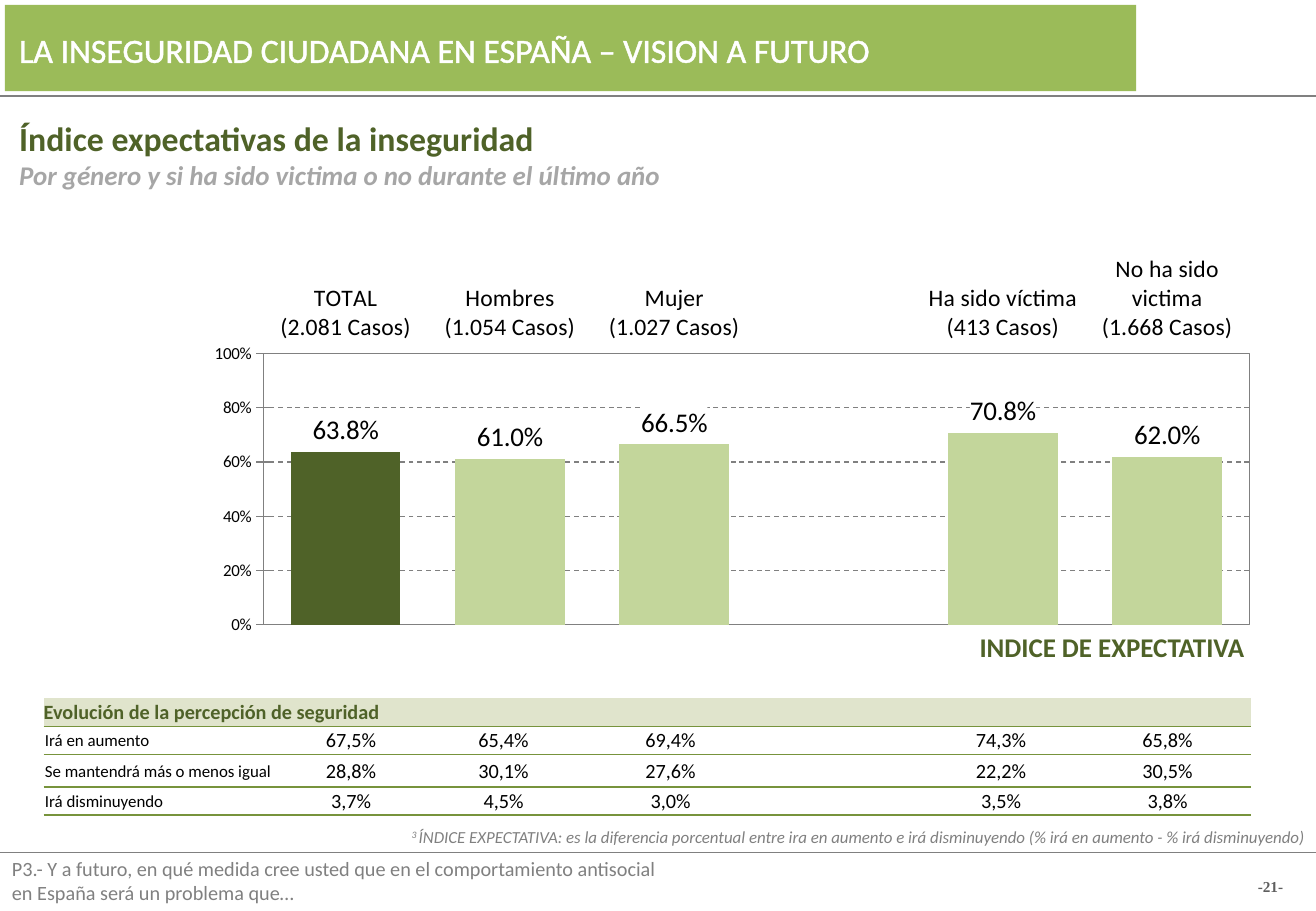
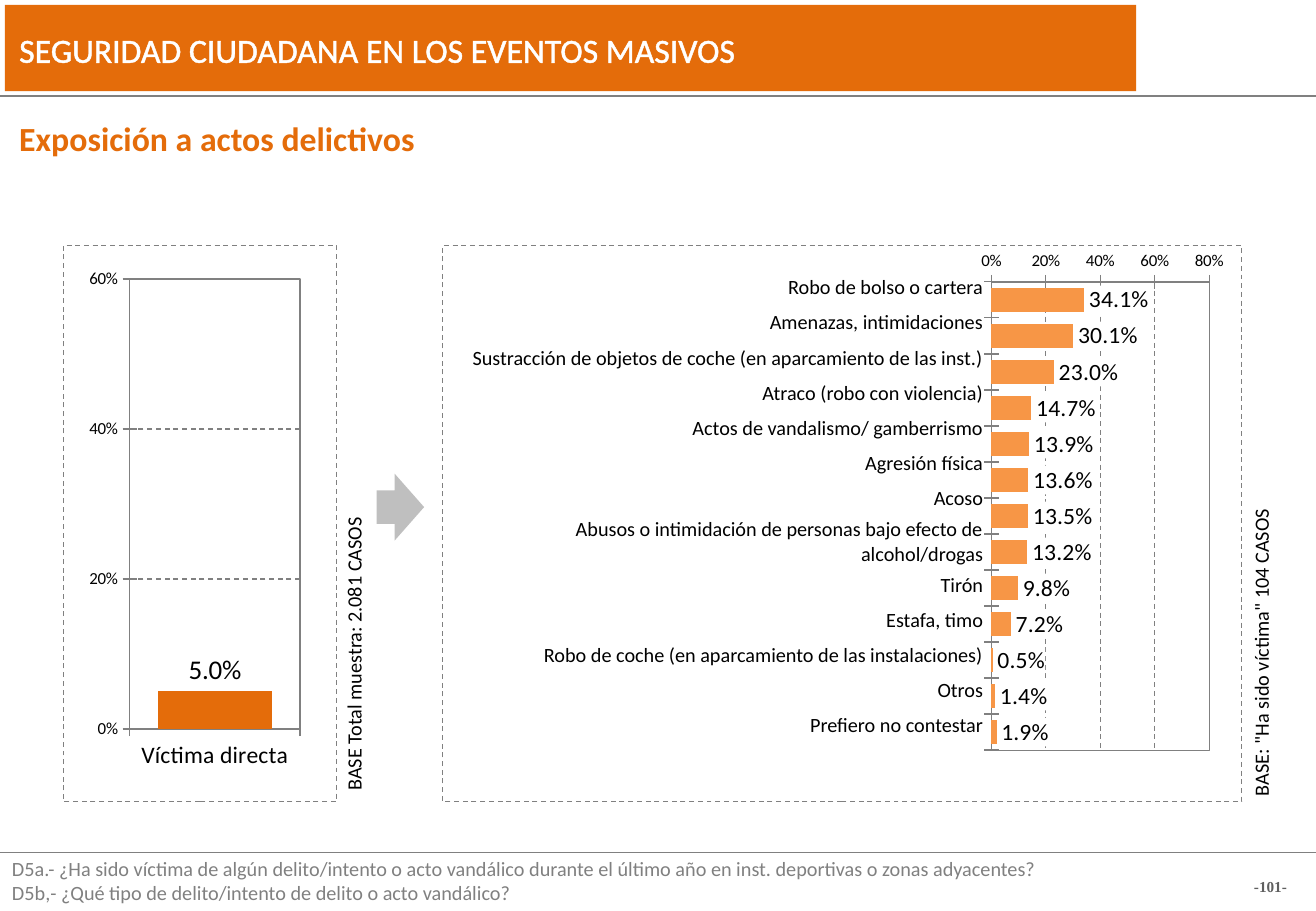
from lxml.etree import SubElement
from pptx import Presentation
from pptx.chart.data import CategoryChartData
from pptx.dml.color import RGBColor
from pptx.enum.chart import XL_AXIS_CROSSES as Crosses, XL_CHART_TYPE as ChartType
from pptx.enum.chart import XL_LABEL_POSITION as LabelPosition
from pptx.enum.chart import XL_TICK_LABEL_POSITION as TickLabels, XL_TICK_MARK as Tick
from pptx.enum.dml import MSO_LINE as Dash
from pptx.enum.shapes import MSO_CONNECTOR as Connector, MSO_SHAPE as Shape
from pptx.enum.text import MSO_ANCHOR as Anchor, PP_ALIGN as Align
from pptx.oxml import parse_xml
from pptx.oxml.ns import nsdecls, qn
from pptx.util import Pt

PX = 9144
PAGE_W, PAGE_H = 1083, 750
WHITE, BLACK = RGBColor(255, 255, 255), RGBColor(0, 0, 0)
GRAY, MID_GRAY = RGBColor(0x80, 0x80, 0x80), RGBColor(0xA6, 0xA6, 0xA6)
PAGE_GRAY, ARROW_GRAY = RGBColor(0x5F, 0x5F, 0x5F), RGBColor(0xBF, 0xBF, 0xBF)
GREEN, DARK_GREEN = RGBColor(0x9B, 0xBB, 0x59), RGBColor(0x4F, 0x62, 0x28)
PALE_GREEN, HEADER_GREEN = RGBColor(0xC3, 0xD6, 0x9B), RGBColor(0xE0, 0xE4, 0xCC)
RULE_GREEN = RGBColor(0x77, 0x93, 0x3C)
ORANGE, LIGHT_ORANGE = RGBColor(0xE4, 0x6C, 0x0A), RGBColor(0xF7, 0x96, 0x46)
NO_STYLE = "{2D5ABB26-0587-4C30-8999-92F81FD0307C}"
CELL_MARGINS = (1, 1, 1, 0)

FUTURE = {
    "band": GREEN, "accent": DARK_GREEN, "number": "-21-",
    "title": "LA INSEGURIDAD CIUDADANA EN ESPAÑA – VISION A FUTURO",
    "heading": "Índice expectativas de la inseguridad",
    "subheading": "Por género y si ha sido victima o no durante el último año",
    "question": ["P3.- Y a futuro, en qué medida cree usted que en el comportamiento antisocial",
                 "en España será un problema que…"],
}
EVENTS = {
    "band": ORANGE, "accent": ORANGE, "number": "-101-",
    "title": "SEGURIDAD CIUDADANA EN LOS EVENTOS MASIVOS",
    "heading": "Exposición a actos delictivos",
    "subheading": "",
    "question": ["D5a.- ¿Ha sido víctima de algún delito/intento o acto vandálico durante el último año "
                 "en inst. deportivas o zonas adyacentes?",
                 "D5b,- ¿Qué tipo de delito/intento de delito o acto vandálico?"],
}
EXPECTATION = [
    ("TOTAL\n(2.081 Casos)", 63.8), ("Hombres\n(1.054 Casos)", 61),
    ("Mujer\n(1.027 Casos)", 66.5), (" ", None),
    ("Ha sido víctima\n(413 Casos)", 70.8), ("No ha sido victima\n(1.668 Casos)", 62),
]
EVOLUTION_TITLE = "Evolución de la percepción de seguridad"
EVOLUTION = [
    ("Irá en aumento", "67,5%", "65,4%", "69,4%", "", "74,3%", "65,8%"),
    ("Se mantendrá más o menos igual", "28,8%", "30,1%", "27,6%", "", "22,2%", "30,5%"),
    ("Irá disminuyendo", "3,7%", "4,5%", "3,0%", "", "3,5%", "3,8%"),
]
EVOLUTION_COLUMNS = [197, 112] + [136] * 4 + [138]
EVOLUTION_COLUMNS[2] = 139
EVOLUTION_ROWS = [23, 23, 27, 23]
NOTE = ("ÍNDICE EXPECTATIVA: es la diferencia porcentual entre ira en aumento e irá disminuyendo "
        "(% irá en aumento - % irá disminuyendo)")
VICTIMS = [("Víctima directa", 5)]
OFFENCES = [
    ("Robo de bolso o cartera", 34.1), ("Amenazas, intimidaciones", 30.1),
    ("Sustracción de objetos de coche (en aparcamiento de las inst.)", 23),
    ("Atraco (robo con violencia)", 14.7), ("Actos de vandalismo/ gamberrismo", 13.9),
    ("Agresión física", 13.6), ("Acoso", 13.5),
    ("Abusos o intimidación de personas bajo efecto de alcohol/drogas", 13.2),
    ("Tirón", 9.8), ("Estafa, timo", 7.2),
    ("Robo de coche (en aparcamiento de las instalaciones)", 0.5),
    ("Otros", 1.4), ("Prefiero no contestar", 1.9),
]
PANELS = [(52, 202, 225, 458), (364, 202, 658, 458)]
BASES = [((909, 516, 257, 30), 'BASE: "Ha sido víctima" 104 CASOS'),
         ((130, 479, 322, 30), "BASE Total muestra: 2.081 CASOS")]


def emu(lengths):
    return [length * PX for length in lengths]


def add_span(para, text, size, color, bold=False, italic=False, font="Calibri"):
    span = para.add_run()
    span.text = text
    span.font.size, span.font.name = Pt(size), font
    span.font.bold, span.font.italic = bold, italic
    span.font.color.rgb = color
    return span


def add_box(page, place, margins=None, anchor=Anchor.TOP, align=Align.LEFT, wrap=True):
    box = page.shapes.add_textbox(*emu(place))
    frame = box.text_frame
    frame.word_wrap, frame.vertical_anchor = wrap, anchor
    if margins:
        set_margins(frame, margins)
    frame.paragraphs[0].alignment = align
    return box, frame.paragraphs[0]


def set_margins(target, margins):
    (target.margin_left, target.margin_top,
     target.margin_right, target.margin_bottom) = emu(margins)


def add_block(page, kind, place, fill, dashed=False):
    block = page.shapes.add_shape(kind, *emu(place))
    block.shadow.inherit = False
    block.fill.solid()
    block.fill.fore_color.rgb = fill
    if dashed:
        style_line(block.line, GRAY, Dash.DASH)
    else:
        block.line.fill.background()
    return block


def style_line(line, color, dash=None):
    line.color.rgb = color
    line.width = Pt(0.75)
    if dash:
        line.dash_style = dash


def add_page(deck, content):
    page = deck.slides.add_slide(deck.slide_layouts[6])
    for y in (79, 702):
        rule = page.shapes.add_connector(Connector.STRAIGHT, *emu((0, y, PAGE_W, y)))
        style_line(rule.line, GRAY)
        SubElement(rule._element.spPr, qn("a:effectLst"))
    add_block(page, Shape.RECTANGLE, (4, 4, 931, 71), content["band"])
    _, para = add_box(page, (6, 19, 726, 44), wrap=False)
    span = add_span(para, content["title"], 20, WHITE)
    span.font._element.insert(0, parse_xml(
        f'<a:ln {nsdecls("a")} w="9525"><a:solidFill><a:srgbClr val="{WHITE}"/></a:solidFill></a:ln>'))
    box, para = add_box(page, (6, 92, 945, 71 if content["subheading"] else 44))
    add_span(para, content["heading"], 20, content["accent"], bold=True)
    if content["subheading"]:
        add_span(box.text_frame.add_paragraph(), content["subheading"], 16, MID_GRAY, True, True)
    box, para = add_box(page, (0, 700, 881, 50))
    first, second = content["question"]
    add_span(para, first, 12, GRAY)
    add_span(box.text_frame.add_paragraph(), second, 12, GRAY)
    _, para = add_box(page, (1018, 722, 55, 15), (0, 0, 0, 0), Anchor.MIDDLE, Align.CENTER)
    add_span(para, content["number"], 9, PAGE_GRAY, bold=True, font="Times New Roman")
    return page


def style_font(font, size, name="Calibri"):
    font.size, font.name = Pt(size), name
    font.color.rgb = BLACK


def set_plot_area(chart, layout):
    area = chart._chartSpace.chart.plotArea
    for old in area.findall(qn("c:layout")):
        area.remove(old)
    sizes = "".join(f'<c:{key} val="{value}"/>' for key, value in zip("xywh", layout))
    area.insert(0, parse_xml(
        f'<c:layout {nsdecls("c")}><c:manualLayout><c:layoutTarget val="inner"/>'
        f'<c:xMode val="edge"/><c:yMode val="edge"/>{sizes}</c:manualLayout></c:layout>'))
    area.append(parse_xml(
        f'<c:spPr {nsdecls("c", "a")}><a:noFill/><a:ln w="9525"><a:solidFill>'
        f'<a:srgbClr val="{GRAY}"/></a:solidFill></a:ln></c:spPr>'))
    chart._chartSpace.chart.addnext(parse_xml(
        f'<c:spPr {nsdecls("c", "a")}><a:noFill/><a:ln><a:noFill/></a:ln></c:spPr>'))


def add_bars(page, kind, place, rows, layout, top, color, label_size, first_color=None):
    data = CategoryChartData()
    data.categories = [name for name, _ in rows]
    data.add_series("Series 1", [value for _, value in rows])
    chart = page.shapes.add_chart(kind, *emu(place), data).chart
    chart.has_legend = chart.has_title = False
    style_font(chart.font, 18, "Times New Roman")
    set_plot_area(chart, layout)
    plot = chart.plots[0]
    plot.gap_width, plot.vary_by_categories = 50, False
    series = plot.series[0]
    series.invert_if_negative = False
    series.format.fill.solid()
    series.format.fill.fore_color.rgb = color
    if first_color:
        fill = series.points[0].format.fill
        fill.solid()
        fill.fore_color.rgb = first_color
    labels = series.data_labels
    labels.show_value, labels.position = True, LabelPosition.OUTSIDE_END
    labels.number_format, labels.number_format_is_linked = "0.0\\%", False
    style_font(labels.font, label_size)
    labels._element.find(qn("c:txPr")).addprevious(parse_xml(
        f'<c:spPr {nsdecls("c", "a")}><a:solidFill><a:srgbClr val="{WHITE}"/></a:solidFill></c:spPr>'))
    for axis, size in ((chart.category_axis, 14), (chart.value_axis, 10)):
        style_font(axis.tick_labels.font, size)
        style_line(axis.format.line, GRAY)
        axis.major_tick_mark, axis.minor_tick_mark = Tick.CROSS, Tick.NONE
    chart.category_axis.has_major_gridlines = False
    values = chart.value_axis
    values.minimum_scale, values.maximum_scale, values.major_unit = 0, top, 20
    values.has_major_gridlines = True
    style_line(values.major_gridlines.format.line, GRAY, Dash.DASH)
    values.tick_labels.number_format = "0\\%"
    values.tick_labels.number_format_is_linked = False
    return chart


def add_grid(page, corner, columns, rows):
    place = (*corner, sum(columns), sum(rows))
    table = page.shapes.add_table(len(rows), len(columns), *emu(place)).table
    table.first_row = table.horz_banding = False
    table._tbl.tblPr.find(qn("a:tableStyleId")).text = NO_STYLE
    for column, width in zip(table.columns, columns):
        column.width = width * PX
    for row, height in zip(table.rows, rows):
        row.height = height * PX
    for cell in table.iter_cells():
        cell.fill.background()
        cell.vertical_anchor = Anchor.MIDDLE
        set_margins(cell, CELL_MARGINS)
    return table


def fill_cell(cell, text, size, color=BLACK, align=Align.LEFT, bold=False):
    para = cell.text_frame.paragraphs[0]
    para.alignment = align
    if text:
        add_span(para, text, size, color, bold)
    else:
        SubElement(para._p, qn("a:endParaRPr"), sz=str(size * 100))


def add_evolution(page):
    table = add_grid(page, (36, 575), EVOLUTION_COLUMNS, EVOLUTION_ROWS)
    header = [EVOLUTION_TITLE] + [""] * (len(EVOLUTION_COLUMNS) - 1)
    for r, row in enumerate([header] + EVOLUTION):
        for c, text in enumerate(row):
            cell = table.cell(r, c)
            if r == 0:
                cell.fill.solid()
                cell.fill.fore_color.rgb = HEADER_GREEN
                set_margins(cell, (0, 0, 0, 0))
                fill_cell(cell, text, 12, DARK_GREEN, bold=True)
            else:
                fill_cell(cell, text, 12 if c else 10, align=Align.CENTER if c else Align.LEFT)
            cell._tc.get_or_add_tcPr().insert(0, parse_xml(
                f'<a:lnB {nsdecls("a")} w="12700"><a:solidFill>'
                f'<a:srgbClr val="{RULE_GREEN}"/></a:solidFill></a:lnB>'))
    table.cell(0, 0).merge(table.cell(0, len(header) - 1))


def build_future(deck):
    page = add_page(deck, FUTURE)
    chart = add_bars(page, ChartType.COLUMN_CLUSTERED, (164, 206, 880, 324), EXPECTATION,
                     (0.06, 0.263, 0.922, 0.689), 100, PALE_GREEN, 16, DARK_GREEN)
    chart.category_axis.tick_label_position = TickLabels.HIGH
    chart.category_axis.major_tick_mark = Tick.NONE
    add_evolution(page)
    _, para = add_box(page, (146, 676, 937, 27), align=Align.RIGHT)
    mark = add_span(para, "3 ", 10, GRAY, italic=True)
    mark.font._element.set("baseline", "30000")
    add_span(para, NOTE, 10, GRAY, italic=True)
    _, para = add_box(page, (633, 514, 401, 37), align=Align.RIGHT)
    add_span(para, "INDICE DE EXPECTATIVA", 16, DARK_GREEN, bold=True)


def build_events(deck):
    page = add_page(deck, EVENTS)
    for panel in PANELS:
        add_block(page, Shape.RECTANGLE, panel, WHITE, dashed=True)
    heights = [42 if len(name) > 62 else 29 for name, _ in OFFENCES]
    table = add_grid(page, (382, 222), [428], heights)
    for r, (name, _) in enumerate(OFFENCES):
        fill_cell(table.cell(r, 0), name, 12, align=Align.RIGHT)
    numbered = [(str(i), value) for i, (_, value) in enumerate(OFFENCES, 1)]
    chart = add_bars(page, ChartType.BAR_CLUSTERED, (805, 207, 285, 441), numbered,
                     (0.038, 0.041, 0.629, 0.889), 80, LIGHT_ORANGE, 14)
    chart.category_axis.tick_label_position = TickLabels.NONE
    chart.category_axis.reverse_order = True
    chart.category_axis.crosses = Crosses.MAXIMUM
    arrow = add_block(page, Shape.RIGHT_ARROW, (310, 390, 39, 55), ARROW_GRAY)
    arrow.adjustments[0], arrow.adjustments[1] = 0.5, 0.62
    add_bars(page, ChartType.COLUMN_CLUSTERED, (6, 206, 321, 447), VICTIMS,
             (0.314, 0.053, 0.437, 0.829), 60, LIGHT_ORANGE, 16, ORANGE)
    for place, text in BASES:
        box, para = add_box(page, place, (4, 5, 4, 5), Anchor.MIDDLE)
        box.rotation = 270
        add_span(para, text, 12, BLACK)


def main():
    deck = Presentation()
    deck.slide_width, deck.slide_height = emu((PAGE_W, PAGE_H))
    build_future(deck)
    build_events(deck)
    deck.save("out.pptx")


if __name__ == "__main__":
    main()
